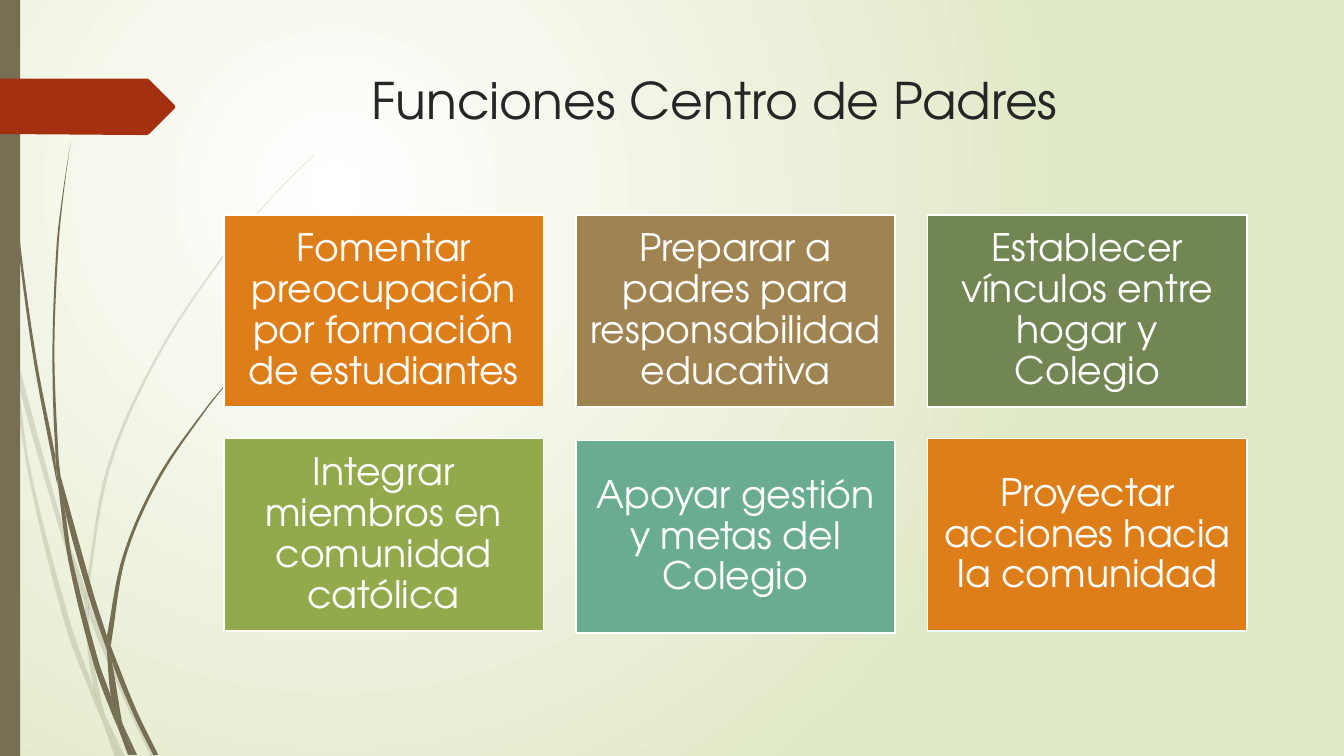
from math import hypot

from lxml.etree import SubElement
from pptx import Presentation
from pptx.dml.color import RGBColor
from pptx.enum.shapes import MSO_SHAPE
from pptx.enum.text import MSO_ANCHOR, PP_ALIGN
from pptx.oxml.ns import qn
from pptx.util import Pt

PX = 9144  # EMU per px, 100 px to the inch
FONT = "TeX Gyre Adventor"

WHITE = RGBColor(0xFF, 0xFF, 0xFF)
PALE_GREEN = RGBColor(0xDF, 0xE8, 0xC4)
INK = RGBColor(0x26, 0x26, 0x26)
STEM = RGBColor(0x76, 0x6F, 0x54)
RED = RGBColor(0xA5, 0x30, 0x10)
ORANGE = RGBColor(0xDE, 0x7E, 0x18)
BROWN = RGBColor(0x9F, 0x83, 0x51)
MOSS = RGBColor(0x72, 0x86, 0x53)
LIME = RGBColor(0x92, 0xAA, 0x4C)
TEAL = RGBColor(0x6A, 0xAC, 0x91)

# Outline points of the grass blades, piece by piece
FAINT_GRASS = [
    [(11, 350), (9, 322), (0, 282), (0, 299), (10, 344)],
    [(58, 522), (84, 599), (85, 586), (62, 520), (14, 345), (17, 376)],
    [(92, 607), (88, 596), (88, 610), (123, 694), (150, 751), (155, 751), (127, 692)],
    [(119, 751), (124, 751), (105, 711)],
    [(93, 683), (70, 619), (31, 469), (17, 376), (11, 350), (28, 470), (65, 621),
     (92, 693), (101, 714), (99, 707)],
    [(84, 599), (87, 646), (93, 683), (96, 692), (105, 711), (103, 706), (91, 646),
     (88, 610), (88, 608)],
    [(88, 584), (110, 462), (160, 349), (229, 245), (268, 198), (290, 175), (312, 154),
     (312, 153), (289, 175), (268, 197), (228, 244), (158, 348), (107, 461), (85, 584),
     (85, 586), (88, 596)],
    [(101, 714), (114, 751), (119, 751)],
    [(88, 608), (88, 610), (88, 596), (85, 586), (84, 599)],
    [(96, 692), (93, 683), (99, 707), (101, 714), (119, 751), (105, 711)],
]
DARK_GRASS = [
    [(7, 110), (17, 233), (33, 355), (56, 477), (57, 481), (55, 457), (55, 453),
     (36, 355), (19, 232), (8, 109), (5, 48), (4, 0), (3, 0), (4, 48)],
    [(88, 592), (106, 645), (106, 633), (106, 631), (93, 590), (60, 472), (64, 505)],
    [(113, 649), (110, 641), (111, 656), (132, 708), (152, 749), (157, 749), (136, 706)],
    [(110, 691), (98, 657), (72, 556), (64, 505), (57, 477), (68, 557), (93, 659),
     (111, 708), (117, 722), (116, 717)],
    [(60, 472), (58, 453), (54, 349), (58, 245), (63, 193), (70, 141), (62, 193),
     (56, 245), (52, 349), (55, 449)],
    [(133, 749), (136, 749), (122, 719)],
    [(57, 477), (64, 505), (60, 472), (55, 449), (55, 453)],
    [(111, 633), (125, 552), (158, 476), (205, 406), (231, 374), (245, 359), (261, 344),
     (260, 344), (245, 358), (231, 373), (204, 405), (156, 474), (122, 551), (106, 631),
     (110, 641)],
    [(117, 722), (127, 749), (131, 749)],
    [(106, 645), (110, 691), (116, 706), (122, 719), (121, 716), (111, 656), (109, 651)],
    [(106, 645), (109, 651), (111, 656), (110, 641), (106, 631), (106, 633)],
    [(116, 706), (110, 691), (116, 717), (117, 722), (130, 749), (133, 749), (122, 719)],
]
TAG_OUTLINE = [(0, 78), (136, 78), (146, 78), (148, 79), (173, 104), (174, 106),
               (173, 108), (148, 133), (146, 134), (136, 134), (0, 133)]

# Text, colour and downward shift of each card, row by row
CARDS = [
    ("Fomentar preocupación por formación de estudiantes", ORANGE, 0),
    ("Preparar a padres para responsabilidad educativa", BROWN, 0),
    ("Establecer vínculos entre hogar y Colegio", MOSS, 0),
    ("Integrar miembros en comunidad católica", LIME, 0),
    ("Apoyar gestión y metas del Colegio", TEAL, 2),
    ("Proyectar acciones hacia la comunidad", ORANGE, 0),
]
COLUMNS = 3
CARD_LEFT, CARD_TOP = 222, 213
CARD_WIDTH, CARD_HEIGHT = 317, 191
CARD_MARGIN = 12
COLUMN_STEP, ROW_STEP = 349, 222


def paint_background(slide):
    fill = slide.background.fill
    fill.gradient()
    for stop, color, position in zip(fill.gradient_stops, (WHITE, PALE_GREEN), (0, 1)):
        stop.color.rgb = color
        stop.position = position
    gradient = slide.element.find(".//" + qn("a:gradFill"))
    gradient.remove(gradient.find(qn("a:lin")))
    circle = SubElement(gradient, qn("a:path"), path="circle")
    SubElement(circle, qn("a:fillToRect"), l="50000", t="50000", r="100000", b="100000")


def paint_shape(shape, color):
    shape.shadow.inherit = False
    shape.fill.solid()
    shape.fill.fore_color.rgb = color
    shape.line.fill.background()


def add_outline(slide, points, color):
    corners = [(round(x * PX), round(y * PX)) for x, y in points]
    builder = slide.shapes.build_freeform(*corners[0], scale=1.0)
    builder.add_line_segments(corners[1:], close=True)
    shape = builder.convert_to_shape()
    paint_shape(shape, color)
    return shape


def direction(start, end):
    run, rise = end[0] - start[0], end[1] - start[1]
    length = hypot(run, rise)
    return run / length, rise / length


def tangent(before, point, after):
    """Return the curve's direction at a point, or None at a sharp corner."""
    arriving, leaving = direction(before, point), direction(point, after)
    if arriving[0] * leaving[0] + arriving[1] * leaving[1] < 0.9:
        return None
    return direction(before, after)


def curve_points(points):
    """Return the start, then two control points and an end per closed-curve segment."""
    count = len(points)
    tangents = [tangent(points[i - 1], points[i], points[(i + 1) % count])
                for i in range(count)]
    result = [points[0]]
    for i, start in enumerate(points):
        following = (i + 1) % count
        end = points[following]
        chord = direction(start, end)
        reach = hypot(end[0] - start[0], end[1] - start[1]) / 3
        out, into = tangents[i] or chord, tangents[following] or chord
        result += [(start[0] + out[0] * reach, start[1] + out[1] * reach),
                   (end[0] - into[0] * reach, end[1] - into[1] * reach), end]
    return result


def add_blade(slide, points, opacity=100):
    shape = add_outline(slide, curve_points(points), STEM)
    # Join every three line segments into one Bézier segment
    segments = list(shape.element.iter(qn("a:lnTo")))
    for first, second, third in zip(segments[::3], segments[1::3], segments[2::3]):
        first.tag = qn("a:cubicBezTo")
        for segment in (second, third):
            first.append(segment[0])
            segment.getparent().remove(segment)
    if opacity < 100:
        color = shape.element.find(".//" + qn("a:srgbClr"))
        SubElement(color, qn("a:alpha"), val=str(opacity * 1000))


def add_rectangle(slide, left, top, width, height, color):
    shape = slide.shapes.add_shape(
        MSO_SHAPE.RECTANGLE, left * PX, top * PX, width * PX, height * PX)
    paint_shape(shape, color)
    return shape


def write_text(text_frame, text, size, color, alignment):
    text_frame.word_wrap = True
    text_frame.text = text
    paragraph = text_frame.paragraphs[0]
    paragraph.alignment = alignment
    font = paragraph.runs[0].font
    font.name = FONT
    font.size = Pt(size)
    font.color.rgb = color
    return paragraph


def add_title(slide, text):
    box = slide.shapes.add_textbox(359 * PX, 64 * PX, 974 * PX, 140 * PX)
    write_text(box.text_frame, text, 36, INK, PP_ALIGN.LEFT)


def add_card(slide, left, top, text, color):
    card = add_rectangle(slide, left, top, CARD_WIDTH, CARD_HEIGHT, color)
    card.line.color.rgb = WHITE
    card.line.width = Pt(1.25)
    frame = card.text_frame
    frame.vertical_anchor = MSO_ANCHOR.MIDDLE
    frame.margin_left = frame.margin_right = CARD_MARGIN * PX
    frame.margin_top = frame.margin_bottom = CARD_MARGIN * PX
    write_text(frame, text, 27, WHITE, PP_ALIGN.CENTER).line_spacing = 0.9


def main():
    presentation = Presentation()
    presentation.slide_width = 1333 * PX
    presentation.slide_height = 750 * PX
    slide = presentation.slides.add_slide(presentation.slide_layouts[6])

    # Backdrop: gradient, grass, side bar and tag
    paint_background(slide)
    for points in FAINT_GRASS:
        add_blade(slide, points, opacity=20)
    for points in DARK_GRASS:
        add_blade(slide, points)
    add_rectangle(slide, 0, 0, 20, 750, STEM)
    add_outline(slide, TAG_OUTLINE, RED)

    # Title and grid of cards
    add_title(slide, "Funciones Centro de Padres")
    for index, (text, color, shift) in enumerate(CARDS):
        row, column = divmod(index, COLUMNS)
        add_card(slide, CARD_LEFT + column * COLUMN_STEP,
                 CARD_TOP + row * ROW_STEP + shift, text, color)

    presentation.save("out.pptx")


if __name__ == "__main__":
    main()
